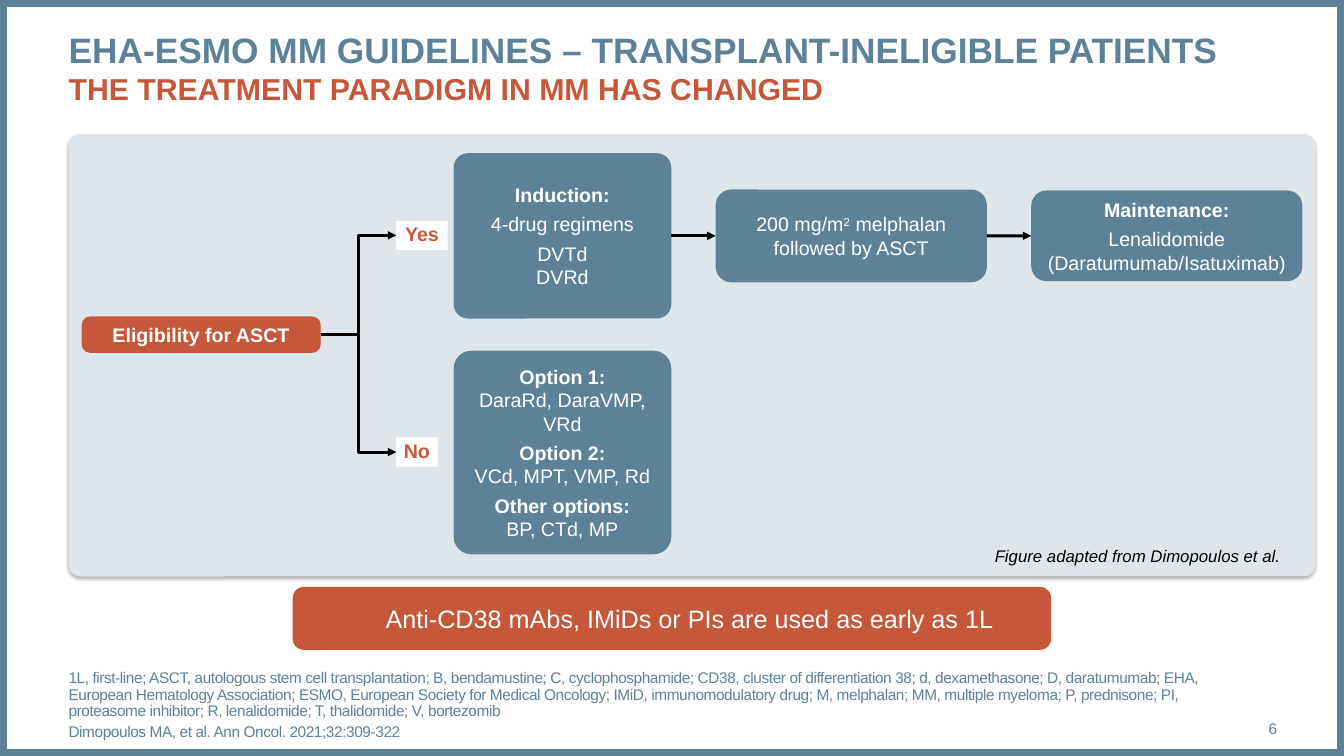
import copy
import dataclasses
import typing

import lxml.etree
import pptx
import pptx.dml.color
import pptx.enum.shapes
import pptx.enum.text
import pptx.oxml.ns
import pptx.util

SHAPES = pptx.enum.shapes.MSO_SHAPE
ELBOW = pptx.enum.shapes.MSO_CONNECTOR.ELBOW
STRAIGHT = pptx.enum.shapes.MSO_CONNECTOR.STRAIGHT
ALIGN = pptx.enum.text.PP_ALIGN
ANCHOR = pptx.enum.text.MSO_ANCHOR
BLUE, RUST, PALE, WHITE, BLACK = "5D8298", "C6573B", "DEE6EB", "FFFFFF", "000000"
LEFT_SITE, RIGHT_SITE = 1, 3

deck = pptx.Presentation()
deck.slide_width = pptx.util.Inches(13.33)
deck.slide_height = pptx.util.Inches(7.5)
slide = deck.slides.add_slide(deck.slide_layouts[5])


class Area(typing.NamedTuple):
    """Left, top, width and height as percentages of the slide."""
    left: float
    top: float
    width: float
    height: float

    def lengths(self) -> list[int]:
        sides = (deck.slide_width, deck.slide_height) * 2
        return [round(share * side / 100) for share, side in zip(self, sides)]


class Run(typing.NamedTuple):
    text: str
    bold: bool = False
    size: float | None = None
    color: str | None = None
    raised: bool = False


Paragraphs = list[list[Run]]


@dataclasses.dataclass
class Step:
    area: Area
    paragraphs: Paragraphs
    radius: float
    fill: str = BLUE


@dataclasses.dataclass
class Answer:
    area: Area
    word: str


def rgb(color: str) -> pptx.dml.color.RGBColor:
    return pptx.dml.color.RGBColor.from_string(color)


def write(shape, paragraphs: Paragraphs, *, size: float = 14, color: str = WHITE,
          italic: bool = False, align=ALIGN.CENTER, anchor=ANCHOR.MIDDLE,
          margins: tuple[float, float] = (0.04, 0.05), before: float = 0,
          after: float = 0, line_spacing: float = 1, tracking: float = 0,
          indent: float = 0, wrap: bool = True) -> None:
    frame = shape.text_frame
    frame.word_wrap = wrap
    frame.auto_size = pptx.enum.text.MSO_AUTO_SIZE.NONE
    frame.vertical_anchor = anchor
    frame.margin_left = frame.margin_right = pptx.util.Inches(margins[0])
    frame.margin_top = frame.margin_bottom = pptx.util.Inches(margins[1])
    for number, runs in enumerate(paragraphs):
        paragraph = frame.add_paragraph() if number else frame.paragraphs[0]
        paragraph.alignment = align
        paragraph.line_spacing = line_spacing
        paragraph.space_before = pptx.util.Pt(before if number else 0)
        paragraph.space_after = pptx.util.Pt(after)
        if indent:
            paragraph._p.get_or_add_pPr().set("indent", str(pptx.util.Inches(indent)))
        for part in runs:
            for line_number, line in enumerate(part.text.split("\n")):
                if line_number:
                    # The break takes the format of the line before it
                    paragraph.add_line_break()
                    paragraph._p[-1].append(copy.deepcopy(run._r.get_or_add_rPr()))
                if not line:
                    continue
                run = paragraph.add_run()
                run.text = line
                run.font.name = "Arial"
                run.font.size = pptx.util.Pt(part.size or size)
                run.font.bold = part.bold
                run.font.italic = italic
                run.font.color.rgb = rgb(part.color or color)
                properties = run._r.get_or_add_rPr()
                if tracking:
                    properties.set("spc", str(round(tracking * 100)))
                if part.raised:
                    properties.set("baseline", "30000")


def add_block(area: Area, *, fill: str | None = None, radius: float | None = None,
              line: str | None = None, line_width: float = 1):
    preset = SHAPES.RECTANGLE if radius is None else SHAPES.ROUNDED_RECTANGLE
    block = slide.shapes.add_shape(preset, *area.lengths())
    block.shadow.inherit = False
    if radius is not None:
        block.adjustments[0] = radius
    if fill:
        block.fill.solid()
        block.fill.fore_color.rgb = rgb(fill)
    else:
        block.fill.background()
    if line:
        block.line.color.rgb = rgb(line)
        block.line.width = pptx.util.Pt(line_width)
    else:
        block.line.fill.background()
    return block


def add_shadow(block) -> None:
    effects = block._element.spPr.find(pptx.oxml.ns.qn("a:effectLst"))
    shadow = lxml.etree.SubElement(
        effects, pptx.oxml.ns.qn("a:outerShdw"), blurRad=str(pptx.util.Pt(3.1)),
        dist=str(pptx.util.Pt(1.8)), dir="5400000", algn="t", rotWithShape="0")
    tint = lxml.etree.SubElement(shadow, pptx.oxml.ns.qn("a:srgbClr"), val=BLACK)
    lxml.etree.SubElement(tint, pptx.oxml.ns.qn("a:alpha"), val="35000")


def add_arrow(source, target, kind) -> None:
    arrow = slide.shapes.add_connector(kind, 0, 0, 0, 0)
    arrow.begin_connect(source, RIGHT_SITE)
    arrow.end_connect(target, LEFT_SITE)
    arrow.line.color.rgb = rgb(BLACK)
    arrow.line.width = pptx.util.Pt(2)
    lxml.etree.SubElement(arrow.line._get_or_add_ln(),
                          pptx.oxml.ns.qn("a:tailEnd"), type="triangle")
    lxml.etree.SubElement(arrow._element.spPr, pptx.oxml.ns.qn("a:effectLst"))


def add_text(area: Area, paragraphs: Paragraphs, **text_format) -> None:
    write(slide.shapes.add_textbox(*area.lengths()), paragraphs, **text_format)


# Frame and panel
add_block(Area(0, 0, 100, 100), line=BLUE, line_width=10)
add_shadow(add_block(Area(5.1, 17.73, 92.78, 58.53), fill=PALE, radius=0.027))

# Title
title = slide.shapes.title
title.left, title.top, title.width, title.height = Area(5.1, 3.73, 89.93, 12.53).lengths()
write(title, [[Run("EHA-ESMO MM GUIDELINES – TRANSPLANT-INELIGIBLE PATIENTS\n", True, 25.2, BLUE),
               Run("THE TREATMENT PARADIGM IN MM HAS CHANGED", True, 21.6, RUST)]],
      align=ALIGN.LEFT, anchor=ANCHOR.TOP, margins=(0, 0))

# Treatment steps
steps = {
    "eligibility": Step(Area(6.08, 41.87, 17.78, 4.8),
                        [[Run("Eligibility for ASCT", True)]], 0.226, RUST),
    "induction": Step(Area(33.75, 20.27, 16.2, 21.87),
                      [[Run("Induction:", True)], [Run("4-drug regimens")],
                       [Run("DVTd\nDVRd")]], 0.087),
    "melphalan": Step(Area(53.25, 25.07, 20.18, 12.27),
                      [[Run("200 mg/m"), Run("2", raised=True),
                        Run(" melphalan\nfollowed by ASCT")]], 0.168),
    "maintenance": Step(Area(76.73, 25.2, 20.18, 12),
                        [[Run("Maintenance:", True)],
                         [Run("Lenalidomide (Daratumumab/Isatuximab)")]], 0.168),
    "options": Step(Area(33.75, 46.4, 16.2, 26.93),
                    [[Run("Option 1:\n", True), Run("DaraRd, DaraVMP, VRd")],
                     [Run("Option 2:\n", True), Run("VCd, MPT, VMP, Rd")],
                     [Run("Other options:\n", True), Run("BP, CTd, MP")]], 0.087),
}
blocks = {}
for name, step in steps.items():
    blocks[name] = add_block(step.area, fill=step.fill, radius=step.radius)
    write(blocks[name], step.paragraphs, after=4)

# Yes and No branches
for answer in (Answer(Area(29.48, 29.2, 3.83, 3.87), "Yes"),
               Answer(Area(29.48, 57.87, 3.08, 3.87), "No")):
    label = add_block(answer.area, fill=WHITE)
    write(label, [[Run(answer.word, True)]], color=RUST, anchor=ANCHOR.TOP,
          margins=(0.04, 0.04), line_spacing=0.9)
    add_arrow(blocks["eligibility"], label, ELBOW)

# Sequence for eligible patients
add_arrow(blocks["induction"], blocks["melphalan"], STRAIGHT)
add_arrow(blocks["melphalan"], blocks["maintenance"], STRAIGHT)
add_text(Area(73.28, 71.47, 23.25, 4), [[Run("Figure adapted from Dimopoulos et al.")]],
         size=12, color=BLACK, italic=True, align=ALIGN.LEFT, anchor=ANCHOR.TOP,
         margins=(0.1, 0.05), wrap=False)

# Key message
message = add_block(Area(21.83, 77.73, 56.33, 8.13), fill=RUST, radius=0.169, line=RUST)
write(message, [[Run("Anti-CD38 mAbs, IMiDs or PIs are used as early as 1L")]],
      size=18, margins=(0.04, 0.04), indent=0.35)

# Abbreviations, reference and page number
abbreviations = (
    "1L, first-line; ASCT, autologous stem cell transplantation; B, bendamustine; "
    "C, cyclophosphamide; CD38, cluster of differentiation 38; d, dexamethasone; "
    "D, daratumumab; EHA, European Hematology Association; ESMO, European Society for "
    "Medical Oncology; IMiD, immunomodulatory drug; M, melphalan; MM, multiple myeloma; "
    "P, prednisone; PI, proteasome inhibitor; R, lenalidomide; T, thalidomide; V, bortezomib")
add_text(Area(5.1, 88, 86.85, 10),
         [[Run(abbreviations)], [Run("Dimopoulos MA, et al. Ann Oncol. 2021;32:309-322")]],
         size=11, color=BLUE, align=ALIGN.LEFT, anchor=ANCHOR.BOTTOM, margins=(0, 0),
         before=3, line_spacing=0.9, tracking=-0.3)
add_text(Area(88.58, 93.73, 6.45, 5.33), [[Run("6")]], size=11, color=BLUE,
         align=ALIGN.RIGHT, margins=(0, 0))

deck.save("out.pptx")
